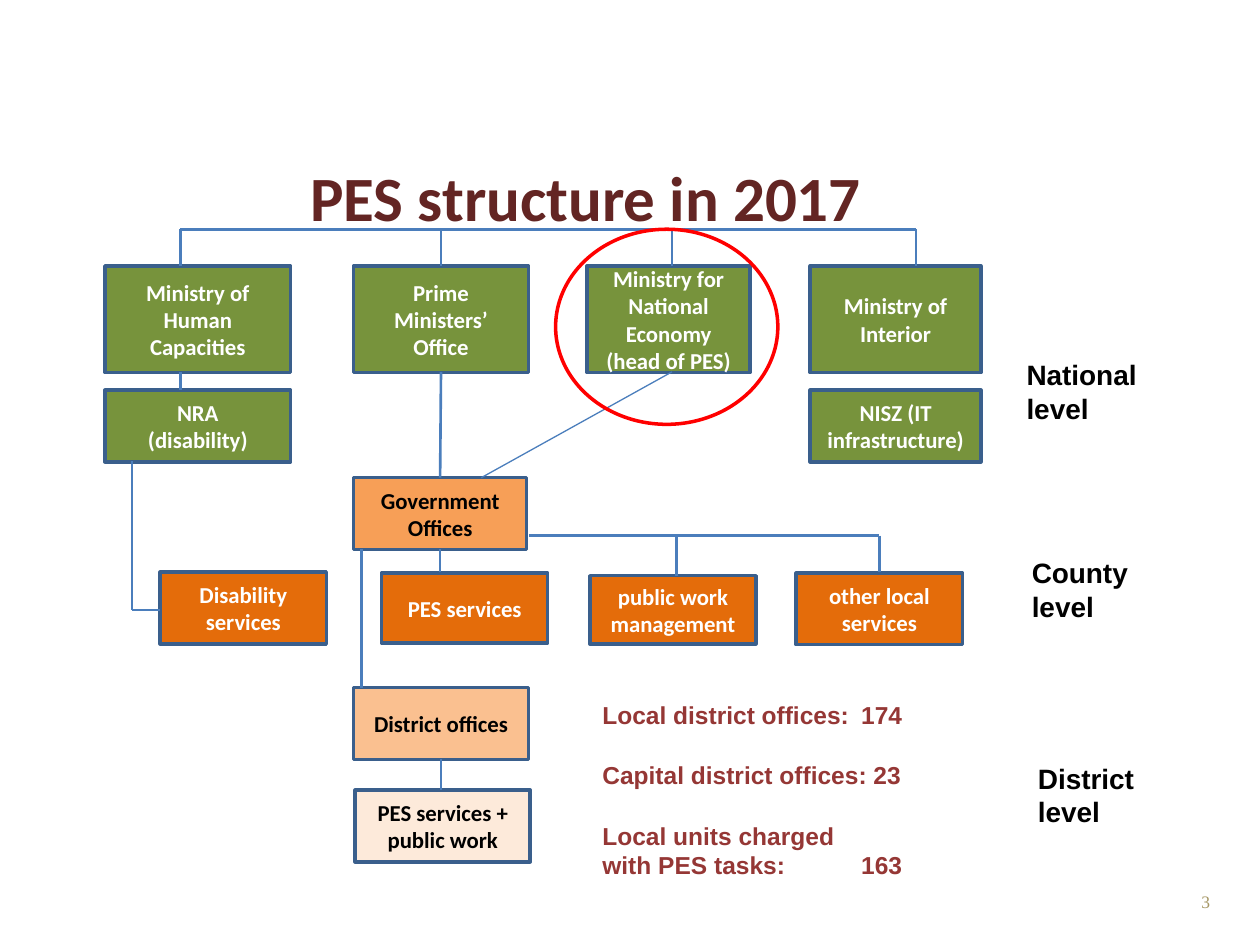
from copy import deepcopy
from dataclasses import dataclass
from typing import NamedTuple

from lxml import etree
from pptx import Presentation
from pptx import util as u
from pptx.dml.color import RGBColor
from pptx.enum import shapes, text
from pptx.oxml.ns import qn


@dataclass(frozen=True)
class Theme:
    ministry: str = "77933C"
    office: str = "F79F57"
    service: str = "E46C0A"
    district: str = "FAC090"
    local: str = "FDEADA"
    border: str = "3A5F8C"
    link: str = "4B7EBC"
    ring: str = "FF0000"
    title: str = "632523"
    figures: str = "953735"
    number: str = "A69765"
    dark: str = "000000"
    light: str = "FFFFFF"
    title_size: float = 36
    label_size: float = 16
    figures_size: float = 14
    box_size: float = 13
    number_size: float = 10


THEME = Theme()


class Area(NamedTuple):
    left: float
    top: float
    width: float
    height: float

    def lengths(self):
        return [u.Pt(value) for value in self]


class Unit(NamedTuple):
    words: str
    area: Area
    fill: str
    ink: str = THEME.light


class Link(NamedTuple):
    x1: float
    y1: float
    x2: float
    y2: float
    weight: float = 1.5


class Level(NamedTuple):
    words: str
    left: float
    top: float


class Figure(NamedTuple):
    words: str
    tab: float = 0


MINISTRY_TOP, MINISTRY_BOTTOM = 152, 212.5
AGENCY_TOP, OFFICE_TOP, OFFICE_BOTTOM = 223, 273, 314
BUS_Y, SERVICE_BUS_Y, ELBOW_Y = 131, 306, 348.5
LOW = 41

UNITS = [
    Unit("PES services + public work", Area(203, 451.5, 100, LOW), THEME.local, THEME.dark),
    Unit("NRA\v(disability)", Area(60, AGENCY_TOP, 106, LOW), THEME.ministry),
    Unit("Government Offices", Area(202, OFFICE_TOP, 99, LOW), THEME.office, THEME.dark),
    Unit("NISZ (IT infrastructure)", Area(463, AGENCY_TOP, 97.5, LOW), THEME.ministry),
    Unit("Disability services", Area(91.5, 327, 95, LOW), THEME.service),
    Unit("PES services", Area(218, 327.5, 95, 40), THEME.service),
    Unit("public work management", Area(337, 329, 95, 39), THEME.service),
    Unit("other local services", Area(455, 327.5, 95, LOW), THEME.service),
    Unit("District offices", Area(202, 393, 100, LOW), THEME.district, THEME.dark),
] + [
    Unit(words, Area(left, MINISTRY_TOP, width, 61), THEME.ministry)
    for words, left, width in (
        ("Ministry of Human Capacities", 60, 106),
        ("Prime Ministers’ Office", 202, 100),
        ("Ministry for National Economy\v(head of PES)", 335.5, 93),
        ("Ministry of Interior", 463, 97.5),
    )
]

LINKS = [Link(x, BUS_Y, x, MINISTRY_TOP) for x in (103, 252, 384, 523.5)] + [
    Link(523.5, BUS_Y, 103, BUS_Y),
    Link(103, MINISTRY_BOTTOM, 103, AGENCY_TOP),
    Link(252, MINISTRY_BOTTOM, 251.5, OFFICE_TOP),
    Link(384, MINISTRY_BOTTOM, 275, OFFICE_TOP, 0.75),
    Link(75.5, 263.5, 75.5, ELBOW_Y),
    Link(91.5, ELBOW_Y, 75.5, ELBOW_Y),
    Link(251.5, OFFICE_BOTTOM, 251.5, 327),
    Link(502.5, SERVICE_BUS_Y, 302.5, SERVICE_BUS_Y),
    Link(386.5, SERVICE_BUS_Y, 386.5, 329),
    Link(502.5, SERVICE_BUS_Y, 502.5, 327),
    Link(206.5, OFFICE_BOTTOM, 206.5, 393),
    Link(252, 433.5, 252, 451.5),
]

LEVELS = [
    Level("National level", 579.5, 201),
    Level("County level", 582.5, 314),
    Level("District level", 586, 431.5),
]

FIGURES = [
    Figure("Local district offices:\t 174", 144),
    Figure("Capital district offices: 23"),
    Figure("Local units charged \vwith PES tasks: \t 163", 148),
]


def apply(target, **values) -> None:
    for name, value in values.items():
        setattr(target, name, value)


def prepare_frame(frame, anchor) -> None:
    apply(frame, word_wrap=True, auto_size=text.MSO_AUTO_SIZE.NONE, vertical_anchor=anchor,
          margin_left=u.Pt(7.2), margin_right=u.Pt(7.2),
          margin_top=u.Pt(3.6), margin_bottom=u.Pt(3.6))


def write(para, words: str, color: str, align=text.PP_ALIGN.LEFT, **font) -> None:
    """Fill a paragraph and format its runs and line breaks alike."""
    para.text = words
    para.alignment = align
    for span in para.runs:
        apply(span.font, **font)
        span.font.color.rgb = RGBColor.from_string(color)
    for line_break in para._p.findall(qn("a:br")):
        line_break.insert(0, deepcopy(para.runs[0]._r.rPr))


def place(shape, area: Area) -> None:
    apply(shape, **dict(zip(("left", "top", "width", "height"), area.lengths())))


def add_unit(page, unit: Unit) -> None:
    box = page.shapes.add_shape(shapes.MSO_SHAPE.RECTANGLE, *unit.area.lengths())
    box.shadow.inherit = False
    box.fill.solid()
    box.fill.fore_color.rgb = RGBColor.from_string(unit.fill)
    box.line.color.rgb = RGBColor.from_string(THEME.border)
    box.line.width = u.Pt(2)
    prepare_frame(box.text_frame, text.MSO_ANCHOR.MIDDLE)
    write(box.text_frame.paragraphs[0], unit.words, unit.ink, text.PP_ALIGN.CENTER,
          name="Calibri", size=u.Pt(THEME.box_size), bold=True)


def add_link(page, link: Link) -> None:
    ends = [u.Pt(value) for value in link[:4]]
    line = page.shapes.add_connector(shapes.MSO_CONNECTOR.STRAIGHT, *ends)
    line.line.color.rgb = RGBColor.from_string(THEME.link)
    line.line.width = u.Pt(link.weight)
    etree.SubElement(line._element.spPr, qn("a:effectLst"))


def add_label(page, words: str, area: Area, color: str, align=text.PP_ALIGN.LEFT, **font) -> None:
    box = page.shapes.add_textbox(*area.lengths())
    prepare_frame(box.text_frame, text.MSO_ANCHOR.TOP)
    write(box.text_frame.paragraphs[0], words, color, align, **font)


def add_figures(body) -> None:
    place(body, Area(337, 396.5, 242.5, 131))
    prepare_frame(body.text_frame, text.MSO_ANCHOR.TOP)
    for index, figure in enumerate(FIGURES):
        para = body.text_frame.add_paragraph() if index else body.text_frame.paragraphs[0]
        props = para._p.get_or_add_pPr()
        apply_attributes = {"marL": "0", "indent": "0"}
        props.attrib.update(apply_attributes)
        etree.SubElement(props, qn("a:buNone"))
        if figure.tab:
            tabs = etree.SubElement(props, qn("a:tabLst"))
            etree.SubElement(tabs, qn("a:tab"), pos=str(int(u.Pt(figure.tab))), algn="l")
        apply(para, space_before=u.Pt(17.6 if index else 0), space_after=u.Pt(0), line_spacing=1.0)
        write(para, figure.words, THEME.figures,
              name="Arial", size=u.Pt(THEME.figures_size), bold=True)


def main() -> None:
    deck = Presentation()
    apply(deck, slide_width=u.Pt(720), slide_height=u.Pt(540))
    page = deck.slides.add_slide(deck.slide_layouts[1])
    title, body = page.placeholders
    place(title, Area(150.5, 86.5, 368.5, 51))
    prepare_frame(title.text_frame, text.MSO_ANCHOR.MIDDLE)
    write(title.text_frame.paragraphs[0], "PES structure in 2017", THEME.title,
          text.PP_ALIGN.CENTER, name="Calibri", size=u.Pt(THEME.title_size), bold=True)
    add_figures(body)
    for unit in UNITS:
        add_unit(page, unit)
    for link in LINKS:
        add_link(page, link)
    for level in LEVELS:
        add_label(page, level.words, Area(level.left, level.top, 106, 24), THEME.dark,
                  name="Arial", size=u.Pt(THEME.label_size), bold=True)
    add_label(page, "3", Area(530.5, 505.5, 168, 29), THEME.number, text.PP_ALIGN.RIGHT,
              name="Times New Roman", size=u.Pt(THEME.number_size))
    ring = page.shapes.add_shape(shapes.MSO_SHAPE.OVAL, *Area(317.5, 131, 127, 111.5).lengths())
    ring.shadow.inherit = False
    ring.fill.background()
    ring.line.color.rgb = RGBColor.from_string(THEME.ring)
    ring.line.width = u.Pt(2)
    deck.save("out.pptx")


if __name__ == "__main__":
    main()
